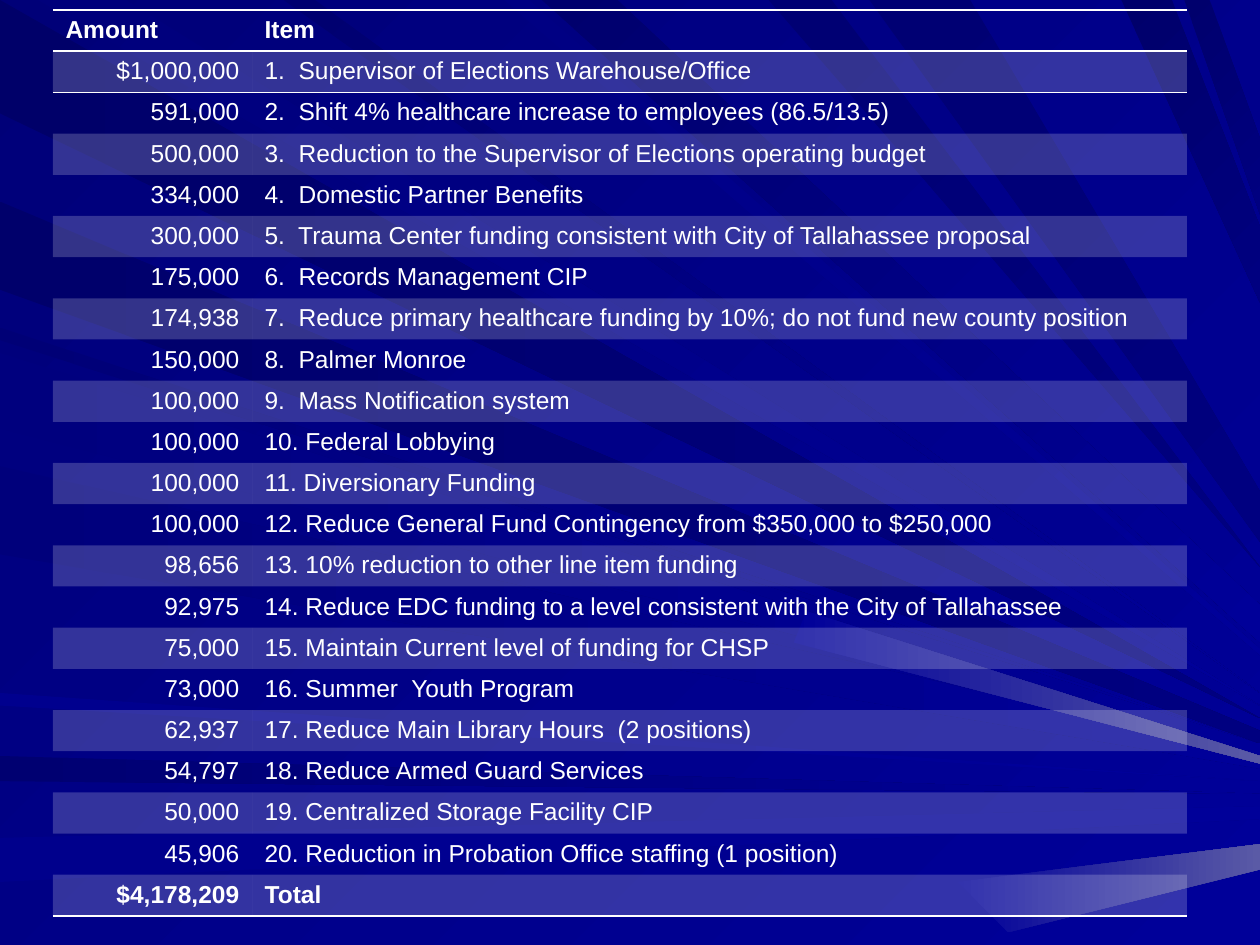
from lxml.etree import SubElement
from pptx import Presentation
from pptx.dml.color import RGBColor
from pptx.enum.text import PP_ALIGN as Align
from pptx.oxml import parse_xml
from pptx.oxml.ns import nsdecls, qn
from pptx.util import Inches, Pt

NO_STYLE = "{2D5ABB26-0587-4C30-8999-92F81FD0307C}"
NAVY, BLUE = "000080", "000099"

# Rays in inches: start edge from and to, right edge from and to, first and last colour
LEFT_RAYS = [
    (0, 0.9, 5.7, 5.7, "000069", NAVY),
    (6, 6.2, 6.3, 6.3, "000071", BLUE),
    (6.65, 7, 6.4, 6.5, "00008C", BLUE),
    (2.6, 2.7, 5.9, 5.9, "000076", BLUE),
    (1.6, 2.3, 5.8, 5.9, "00006B", NAVY),
    (2.8, 3.4, 6, 6, "00007E", BLUE),
    (3.7, 4.4, 6, 6.1, "00007B", BLUE),
    (5.5, 5.6, 6.2, 6.2, "00008E", BLUE),
]
TOP_RAYS = [
    (0.3, 1, 5.6, 5.6, "00007B", BLUE),
    (4, 4.2, 5.15, 5.2, "000083", BLUE),
    (4.3, 4.9, 4.8, 5.1, "00006D", BLUE),
    (6.1, 6.6, 4.5, 4.5, "000073", NAVY),
    (8.9, 9.3, 1.8, 2.4, "00006B", NAVY),
    (9.4, 9.6, 1.1, 1.7, "00006D", NAVY),
    (2.25, 2.5, 5.5, 5.5, "000070", BLUE),
    (6.9, 7.7, 3.9, 4.3, "000073", NAVY),
]
# Light ray ends at the lower right
GLOWS = [
    [(6.4, 4.85), (10, 6), (10, 6.06), (6.3, 5.1)],
    [(7.6, 7), (10, 6.7), (10, 6.9), (8, 7.4)],
]

CUTS = [
    ("$1,000,000", "Supervisor of Elections Warehouse/Office"),
    ("591,000", "Shift 4% healthcare increase to employees (86.5/13.5)"),
    ("500,000", "Reduction to the Supervisor of Elections operating budget"),
    ("334,000", "Domestic Partner Benefits"),
    ("300,000", "Trauma Center funding consistent with City of Tallahassee proposal"),
    ("175,000", "Records Management CIP"),
    ("174,938", "Reduce primary healthcare funding by 10%; do not fund new county position"),
    ("150,000", "Palmer Monroe"),
    ("100,000", "Mass Notification system"),
    ("100,000", "Federal Lobbying"),
    ("100,000", "Diversionary Funding"),
    ("100,000", "Reduce General Fund Contingency from $350,000 to $250,000"),
    ("98,656", "10% reduction to other line item funding"),
    ("92,975", "Reduce EDC funding to a level consistent with the City of Tallahassee"),
    ("75,000", "Maintain Current level of funding for CHSP"),
    ("73,000", "Summer  Youth Program"),
    ("62,937", "Reduce Main Library Hours  (2 positions)"),
    ("54,797", "Reduce Armed Guard Services"),
    ("50,000", "Centralized Storage Facility CIP"),
    ("45,906", "Reduction in Probation Office staffing (1 position)"),
]


def color(value):
    return RGBColor.from_string(value)


def write(frame, text, font="Arial", size=14, ink="FFFFFF", bold=False, align=Align.LEFT):
    para = frame.paragraphs[0]
    para.alignment = align
    span = para.add_run()
    span.text = text
    span.font.name = font
    span.font.size = Pt(size)
    span.font.bold = bold
    span.font.color.rgb = color(ink)


def shade(fill, first, last, angle):
    """Fill with a gradient whose angle runs clockwise."""
    fill.gradient()
    fill.gradient_angle = (360 - angle) % 360
    for stop, value in zip(fill.gradient_stops, (first, last)):
        stop.color.rgb = color(value)


class BudgetPage:
    ink = "FFFFFF"
    band_alpha = 20
    rule_width = Pt(1)

    def __init__(self, deck):
        self.page = deck.slides.add_slide(deck.slide_layouts[6])

    def background(self, first, last, angle):
        shade(self.page.background.fill, first, last, angle)

    def ray(self, corners, first, last, angle):
        points = [(Inches(x), Inches(y)) for x, y in corners]
        builder = self.page.shapes.build_freeform(*points[0])
        builder.add_line_segments(points[1:], close=True)
        shape = builder.convert_to_shape()
        shape.shadow.inherit = False
        shape.line.fill.background()
        shade(shape.fill, first, last, angle)

    def band(self, cell):
        cell.fill.solid()
        cell.fill.fore_color.rgb = color(self.ink)
        tint = cell._tc.tcPr.find(".//" + qn("a:srgbClr"))
        SubElement(tint, qn("a:alpha"), val=str(self.band_alpha * 1000))

    def rule(self, cell, side):
        cell._tc.get_or_add_tcPr().insert(0, parse_xml(
            f'<a:ln{side} {nsdecls("a")} w="{self.rule_width}"><a:solidFill>'
            f'<a:srgbClr val="{self.ink}"/></a:solidFill></a:ln{side}>'))

    def table(self, rows, left, top, widths, height):
        table = self.page.shapes.add_table(
            len(rows), len(widths), left, top, sum(widths), height).table
        table._tbl.tblPr.find(qn("a:tableStyleId")).text = NO_STYLE
        table.first_row = table.horz_banding = False
        for column, width in zip(table.columns, widths):
            column.width = width
        last = len(rows) - 1
        for r, texts in enumerate(rows):
            for c, text in enumerate(texts):
                cell = table.cell(r, c)
                write(cell.text_frame, text, ink=self.ink, bold=r in (0, last),
                      align=Align.RIGHT if r and c == 0 else Align.LEFT)
                if r % 2:
                    self.band(cell)
                else:
                    cell.fill.background()
                # The bottom rule goes in first so that the top one precedes it
                if r in (0, last):
                    self.rule(cell, "B")
                if r in (0, 1):
                    self.rule(cell, "T")


def main():
    deck = Presentation()
    deck.slide_width, deck.slide_height = Inches(10), Inches(7.5)
    budget = BudgetPage(deck)

    # Backdrop of rays running to the right edge
    budget.background("000078", BLUE, 45)
    for start, end, upper, lower, first, last in LEFT_RAYS:
        budget.ray([(0, start), (10, upper), (10, lower), (0, end)], first, last, 0)
    for start, end, upper, lower, first, last in TOP_RAYS:
        budget.ray([(start, 0), (end, 0), (10, upper), (10, lower)], first, last, 45)
    for corners in GLOWS:
        budget.ray(corners, BLUE, "5A5AA6", 0)

    # Header, numbered cuts and total
    cuts = [(amount, f"{n}.".ljust(4) + item) for n, (amount, item) in enumerate(CUTS, 1)]
    rows = [("Amount", "Item"), *cuts, ("$4,178,209", "Total")]
    budget.table(rows, Inches(0.42), Inches(0.08), [Inches(1.58), Inches(7.42)], Inches(7.19))

    deck.save("out.pptx")


if __name__ == "__main__":
    main()
